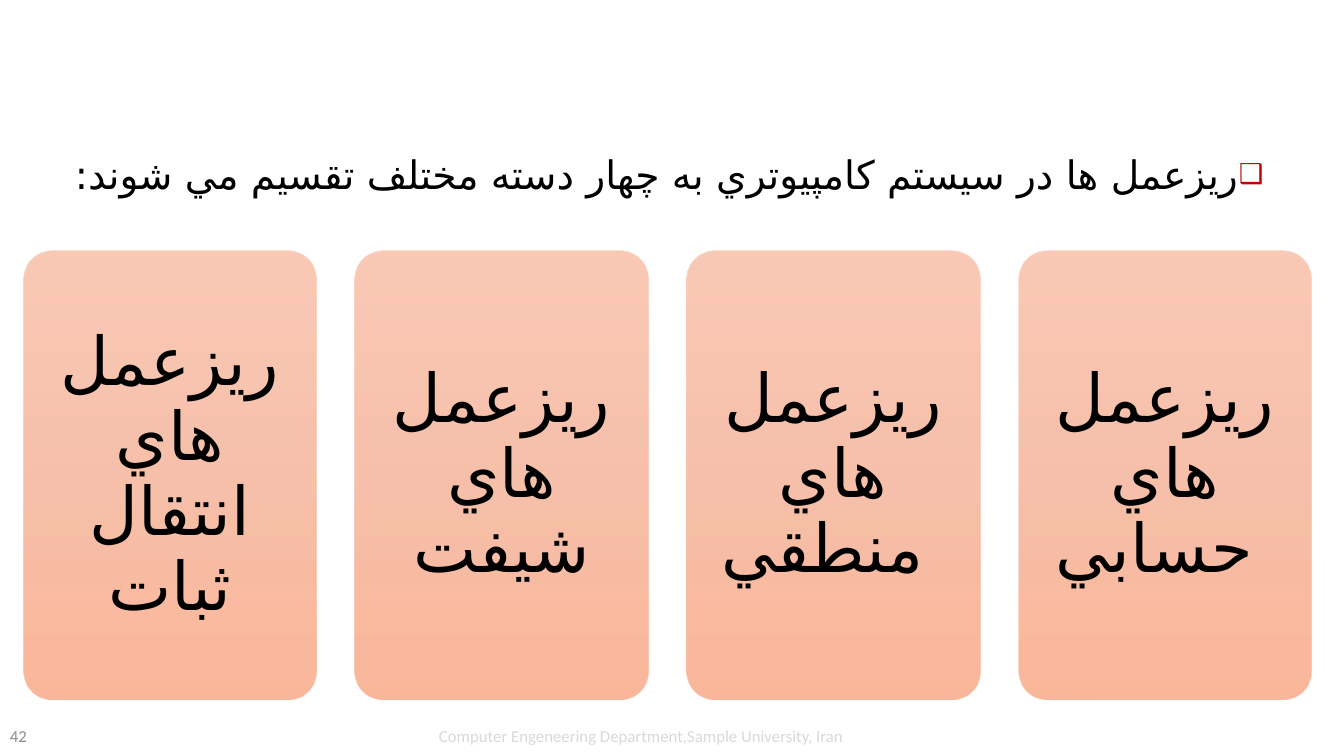
from dataclasses import dataclass

from lxml import etree
from pptx import Presentation
from pptx.dml.color import RGBColor
from pptx.enum.lang import MSO_LANGUAGE_ID
from pptx.enum.shapes import MSO_SHAPE
from pptx.enum.text import MSO_ANCHOR, MSO_AUTO_SIZE, PP_ALIGN
from pptx.oxml import parse_xml
from pptx.oxml.ns import nsdecls, qn
from pptx.util import Emu, Pt

ROUNDED = MSO_SHAPE.ROUNDED_RECTANGLE
MIDDLE, TOP = MSO_ANCHOR.MIDDLE, MSO_ANCHOR.TOP
LEFT, CENTER, RIGHT = PP_ALIGN.LEFT, PP_ALIGN.CENTER, PP_ALIGN.RIGHT
NO_AUTOFIT = MSO_AUTO_SIZE.NONE
ENGLISH, PERSIAN = MSO_LANGUAGE_ID.ENGLISH_US, MSO_LANGUAGE_ID.FARSI

EMU_PER_PX = 9144
FONT = "Calibri"
PERSIAN_FONT = "DejaVu Sans"
CARD_LEFT, CARD_TOP, CARD_WIDTH, CARD_HEIGHT = 23, 249, 291, 445
CARD_PITCH = 329
CARD_STOPS = ((0, "F7BDA5"), (50, "F5B196"), (100, "F8A582"))
CARD_INSET = 20


@dataclass(frozen=True)
class Footer:
    text: str
    left: int
    width: int
    color: str
    align: PP_ALIGN


CATEGORIES = (
    "ريزعمل هاي انتقال ثبات",
    "ريزعمل هاي شيفت",
    "ريزعمل هاي منطقي ",
    "ريزعمل هاي حسابي ",
)
INTRO = "ريزعمل ها در سيستم كامپيوتري به چهار دسته مختلف تقسيم مي شوند:"
FOOTERS = (
    Footer("42", 0, 71, "8C8C8C", LEFT),
    Footer("Computer Engeneering Department,Sample University, Iran",
           361, 550, "D9D9D9", CENTER),
)


def px(length: int) -> Emu:
    return Emu(length * EMU_PER_PX)


def rgb(color: str) -> RGBColor:
    return RGBColor.from_string(color)


def apply(target, formats: dict) -> None:
    for name, value in formats.items():
        setattr(target, name, value)


def write(frame, text: str, size: int, color: str, paragraph_format: dict,
          anchor=MIDDLE, language=PERSIAN):
    apply(frame, {"word_wrap": True, "auto_size": NO_AUTOFIT,
                  "vertical_anchor": anchor})
    paragraph = frame.paragraphs[0]
    apply(paragraph, paragraph_format)
    run = paragraph.add_run()
    run.text = text
    apply(run.font, {"name": FONT, "size": Pt(size), "language_id": language})
    run.font.color.rgb = rgb(color)
    if language == PERSIAN:
        etree.SubElement(run.font._element, qn("a:cs"), typeface=PERSIAN_FONT)
    return paragraph


def add_intro(slide) -> None:
    intro = slide.placeholders[1]
    apply(intro, {"left": px(24), "top": px(121),
                  "width": px(1239), "height": px(580)})
    paragraph = write(intro.text_frame, INTRO, 28, "000000",
                      {"alignment": RIGHT, "line_spacing": 1.5,
                       "space_before": Pt(10)}, TOP)
    properties = paragraph._p.get_or_add_pPr()
    for name, value in {"marL": px(25), "marR": 0,
                        "indent": -px(25), "rtl": 1}.items():
        properties.set(name, str(value))
    bullet_color = etree.SubElement(properties, qn("a:buClr"))
    etree.SubElement(bullet_color, qn("a:srgbClr"), val="C00000")
    etree.SubElement(properties, qn("a:buSzPct"), val="70000")
    etree.SubElement(properties, qn("a:buChar"), char="❑")


def fill_gradient(card) -> None:
    stops = "".join(
        f'<a:gs pos="{position * 1000}"><a:srgbClr val="{color}">'
        f'<a:alpha val="80000"/></a:srgbClr></a:gs>'
        for position, color in CARD_STOPS
    )
    gradient = parse_xml(
        f'<a:gradFill {nsdecls("a")} rotWithShape="1"><a:gsLst>{stops}</a:gsLst>'
        '<a:lin ang="5400000" scaled="0"/></a:gradFill>'
    )
    card.fill.background()
    properties = card._element.spPr
    properties.replace(properties.find(qn("a:noFill")), gradient)


def add_card(slide, column: int, category: str) -> None:
    card = slide.shapes.add_shape(
        ROUNDED, px(CARD_LEFT + column * CARD_PITCH), px(CARD_TOP),
        px(CARD_WIDTH), px(CARD_HEIGHT))
    card.adjustments[0] = 0.1
    card.shadow.inherit = False
    fill_gradient(card)
    card.line.fill.background()
    apply(card.text_frame, {f"margin_{side}": px(CARD_INSET)
                            for side in ("left", "top", "right", "bottom")})
    write(card.text_frame, category, 48, "000000",
          {"alignment": CENTER, "line_spacing": 0.93})


def add_footer(slide, footer: Footer) -> None:
    box = slide.shapes.add_textbox(px(footer.left), px(710),
                                   px(footer.width), px(40))
    write(box.text_frame, footer.text, 12, footer.color,
          {"alignment": footer.align}, language=ENGLISH)


def main() -> None:
    presentation = Presentation()
    apply(presentation, {"slide_width": px(1333), "slide_height": px(750)})
    slide = presentation.slides.add_slide(presentation.slide_layouts[1])
    empty_title = slide.shapes.title._element
    empty_title.getparent().remove(empty_title)
    add_intro(slide)
    for footer in FOOTERS:
        add_footer(slide, footer)
    for column, category in reversed(tuple(enumerate(CATEGORIES))):
        add_card(slide, column, category)
    presentation.save("out.pptx")


if __name__ == "__main__":
    main()
